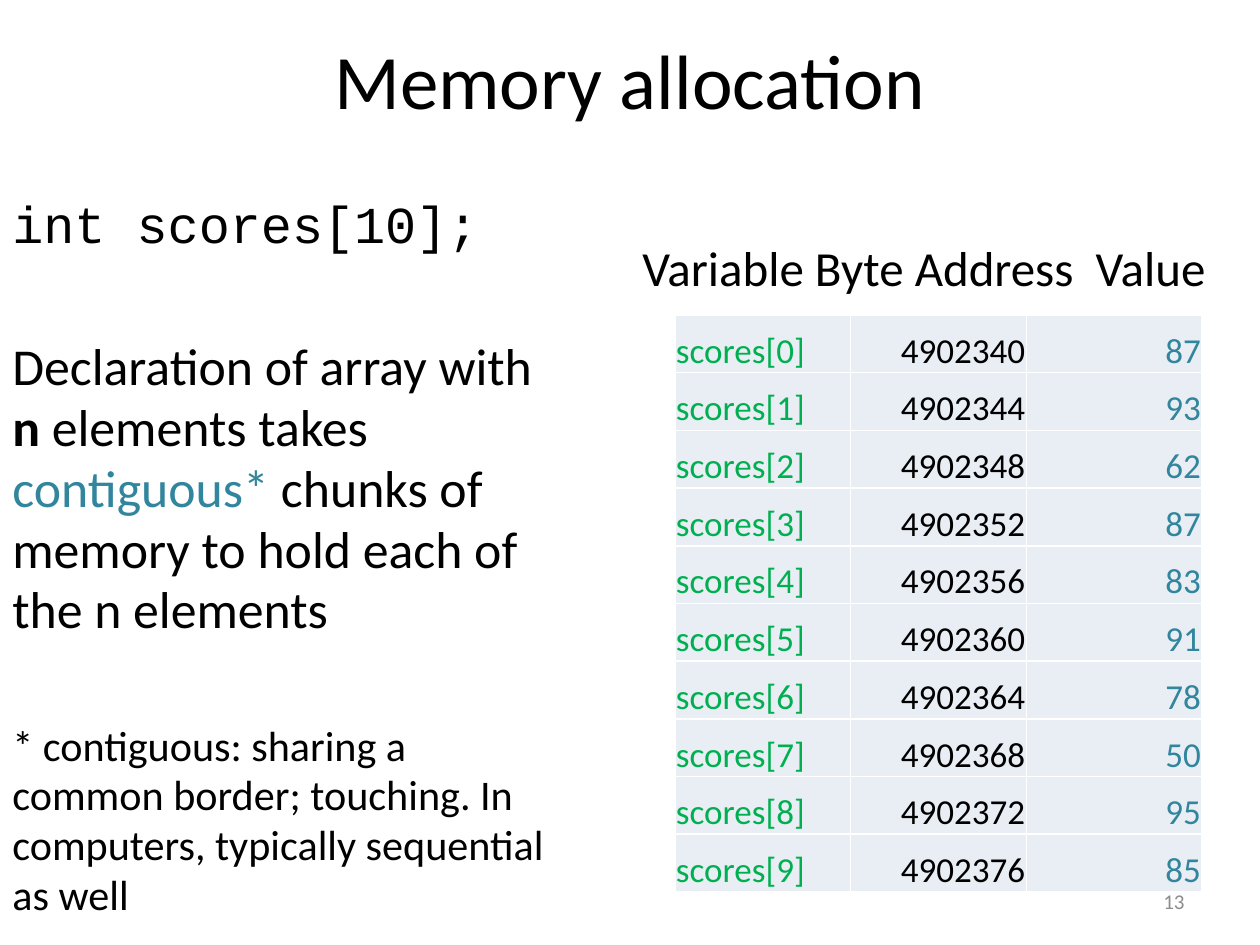
import pptx
import pptx.util
import pptx.dml.color
import pptx.enum.text
import lxml.etree

PX = 914400 // 126
ALIGN = pptx.enum.text.PP_ALIGN
ANCHOR = pptx.enum.text.MSO_ANCHOR
HEX = {"ink": "000000", "teal": "31859C", "green": "00B050",
       "grey": "8C8C8C", "cell": "E9EDF4", "edge": "FFFFFF"}


def write(para, text, size, tone="ink", face="Calibri", bold=False):
    run = para.add_run()
    run.text = text
    form = {"name": face, "size": pptx.util.Pt(size), "bold": bold}
    for key, val in form.items():
        setattr(run.font, key, val)
    run.font.color.rgb = pptx.dml.color.RGBColor.from_string(HEX[tone])


def add_box(*rect):
    frame = slide.shapes.add_textbox(*[n * PX for n in rect]).text_frame
    frame.word_wrap = True
    return frame


deck = pptx.Presentation()
deck.slide_width, deck.slide_height = 1260 * PX, 945 * PX
slide = deck.slides.add_slide(deck.slide_layouts[5])

# Title
title = slide.shapes.title
place = {"left": 63, "top": 0, "width": 1134, "height": 158}
for key, val in place.items():
    setattr(title, key, val * PX)
title.text_frame.vertical_anchor = ANCHOR.MIDDLE
head = title.text_frame.paragraphs[0]
head.alignment = ALIGN.CENTER
write(head, "Memory allocation", 44)

# Declaration, explanation and footnote: space before, then runs
parts = [
    (6, [("int scores[10];", 29.6, "ink", "Courier New")]),
    (46, [("Declaration of array with ", 29.6),
          ("n", 29.6, "ink", "Calibri", True),
          (" elements takes ", 29.6),
          ("contiguous*", 29.6, "teal"),
          (" chunks of memory to hold each of the n elements", 29.6)]),
    (46, [("* contiguous: sharing a common border; touching. In computers, "
           "typically sequential as well", 24.1)]),
]
body = add_box(0, 189, 567, 719)
for i, (gap, runs) in enumerate(parts):
    para = body.add_paragraph() if i else body.paragraphs[0]
    para.space_before = pptx.util.Pt(gap)
    para.line_spacing = 0.98
    for run in runs:
        write(para, *run)

# Table heading
label = add_box(630, 231, 599, 72)
write(label.paragraphs[0], "Variable Byte Address  Value", 28)

# Memory table
values = [87, 93, 62, 87, 83, 91, 78, 50, 95, 85]
grid = slide.shapes.add_table(len(values), 3, 675 * PX, 315 * PX,
                              527 * PX, 577 * PX).table
grid.first_row = grid.horz_banding = False
layout = {"margin_left": PX, "margin_right": PX, "margin_top": PX,
          "margin_bottom": 0, "vertical_anchor": ANCHOR.BOTTOM}
for r, value in enumerate(values):
    row = [(f"scores[{r}]", "green", ALIGN.LEFT),
           (str(4902340 + 4 * r), "ink", ALIGN.RIGHT),
           (str(value), "teal", ALIGN.RIGHT)]
    for c, (text, tone, align) in enumerate(row):
        cell = grid.cell(r, c)
        for key, val in layout.items():
            setattr(cell, key, val)
        para = cell.text_frame.paragraphs[0]
        para.alignment = align
        write(para, text, 20, tone)
        # White borders go ahead of the fill
        props = cell._tc.get_or_add_tcPr()
        for side in ("lnL", "lnR", "lnT", "lnB"):
            line = lxml.etree.SubElement(props, pptx.oxml.ns.qn(f"a:{side}"), w="12700")
            fill = lxml.etree.SubElement(line, pptx.oxml.ns.qn("a:solidFill"))
            lxml.etree.SubElement(fill, pptx.oxml.ns.qn("a:srgbClr"), val=HEX["edge"])
        cell.fill.solid()
        cell.fill.fore_color.rgb = pptx.dml.color.RGBColor.from_string(HEX["cell"])

# Slide number
page = add_box(903, 876, 294, 50)
page.vertical_anchor = ANCHOR.MIDDLE
page.paragraphs[0].alignment = ALIGN.RIGHT
write(page.paragraphs[0], "13", 12, "grey")

deck.save("out.pptx")
